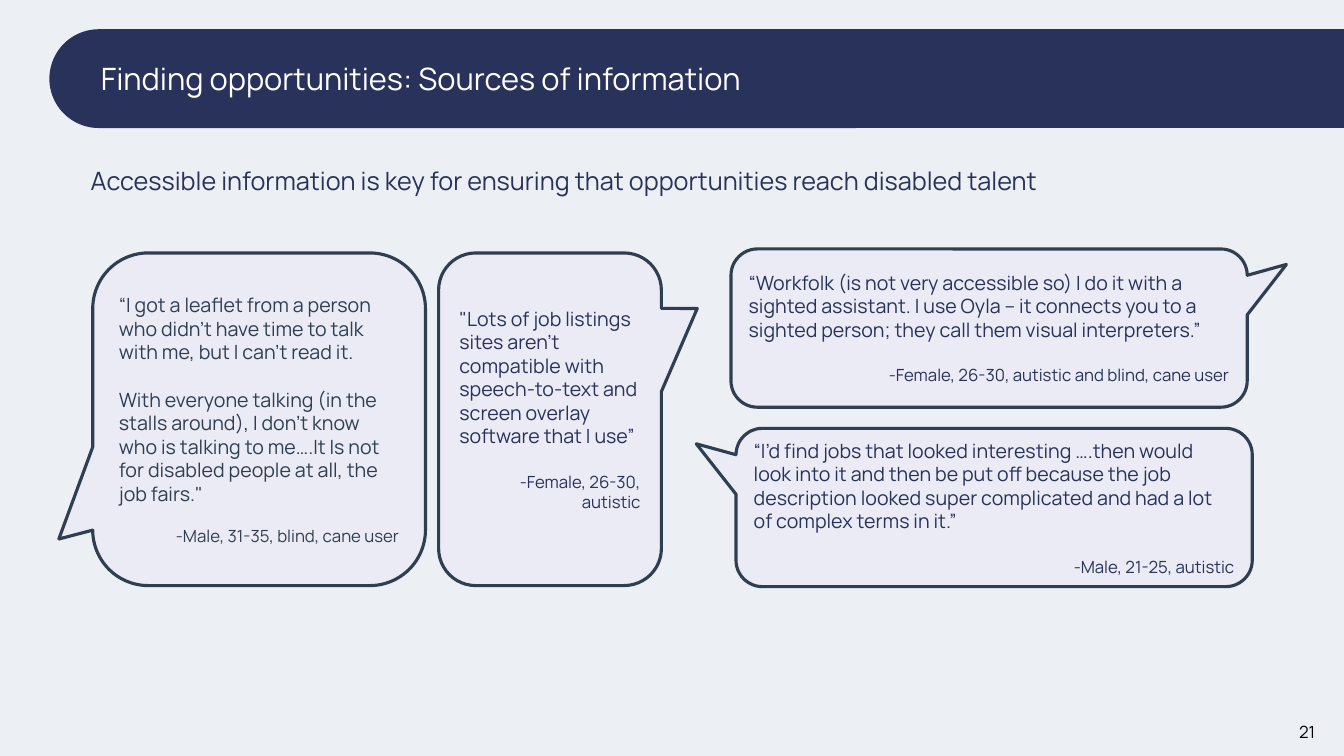
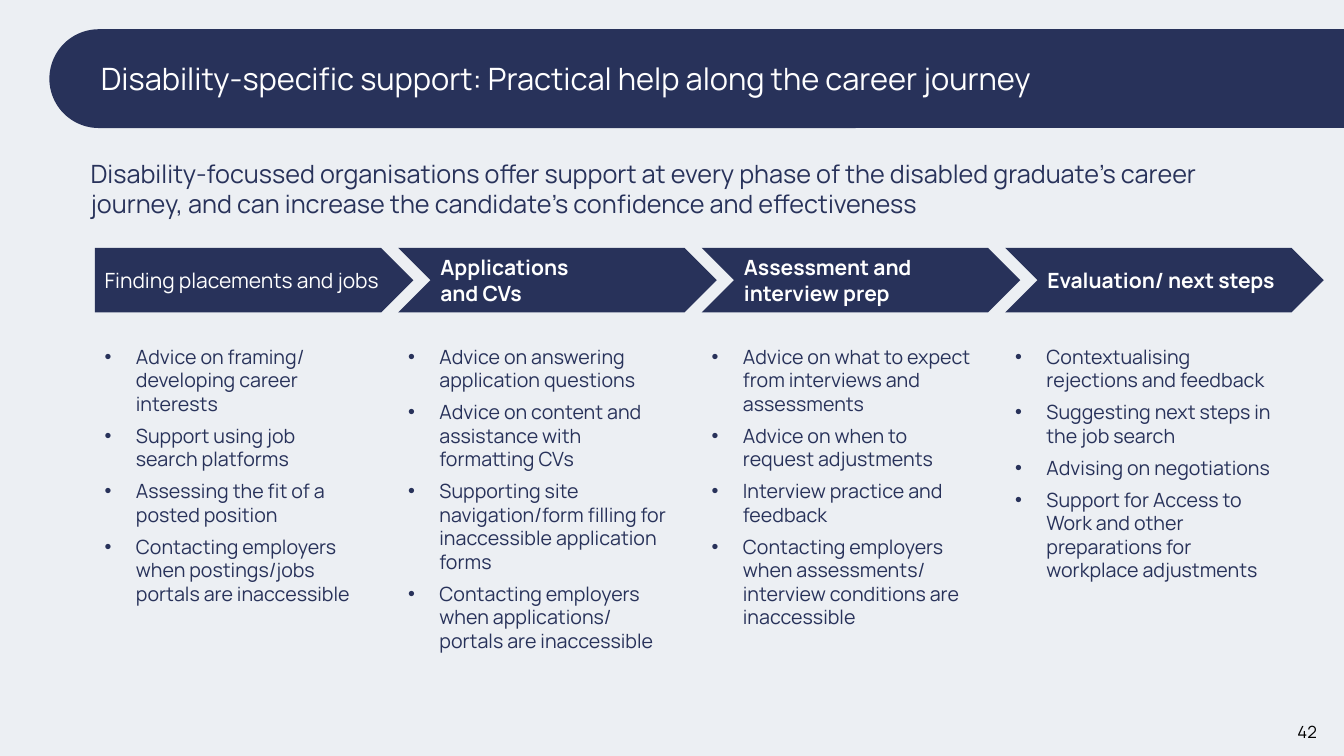
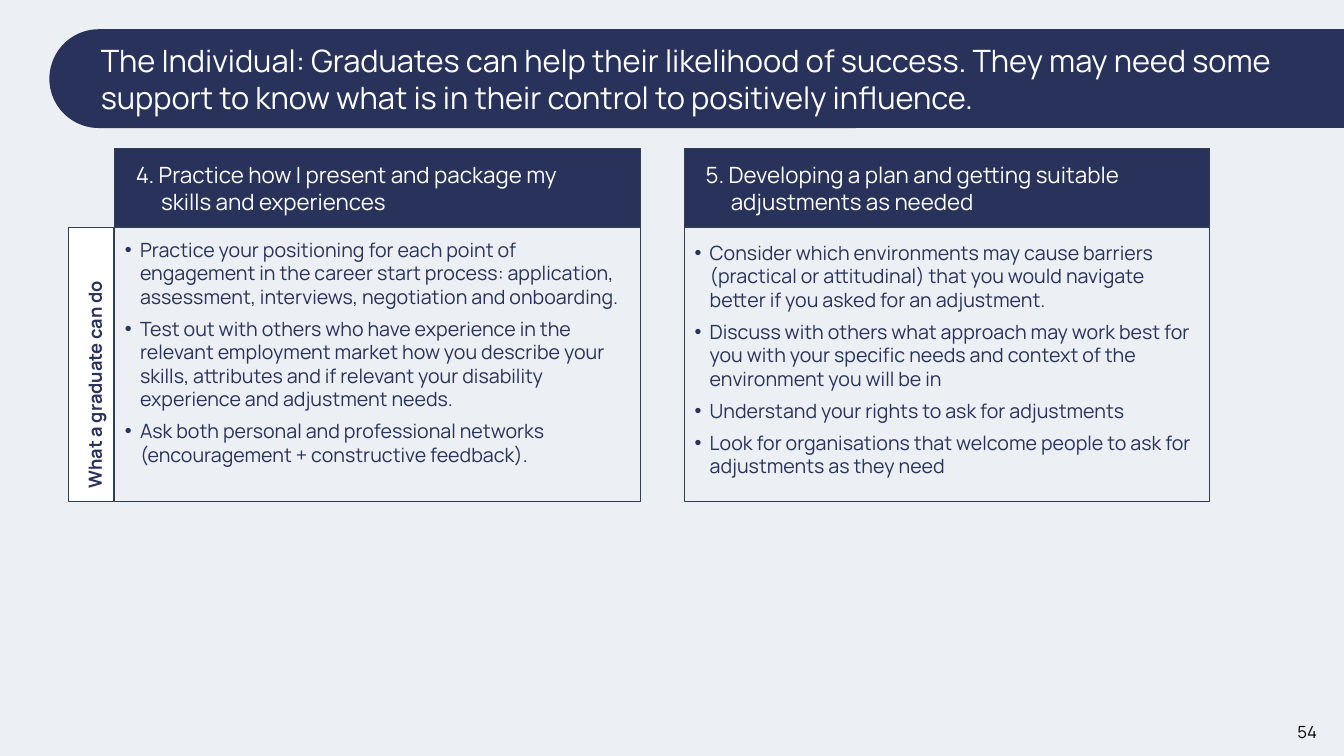
from dataclasses import dataclass

import pptx
import pptx.dml.color
import pptx.enum.shapes
import pptx.enum.text
import pptx.util
from lxml import etree
from pptx.oxml.ns import qn

Inches = pptx.util.Inches
Pt = pptx.util.Pt
Shape = pptx.enum.shapes.MSO_SHAPE
Align = pptx.enum.text.PP_ALIGN
Anchor = pptx.enum.text.MSO_ANCHOR
AutoSize = pptx.enum.text.MSO_AUTO_SIZE


def rgb(value):
    return pptx.dml.color.RGBColor.from_string(value)


@dataclass(frozen=True)
class Theme:
    font: str = "Manrope"
    background: str = "ECEFF3"
    navy: str = "28325A"
    slate: str = "303E51"
    bubble: str = "EAEBF4"
    white: str = "FFFFFF"
    black: str = "000000"
    title: float = 22
    lead: float = 18
    heading: float = 16
    step: float = 15
    body: float = 14
    label: float = 13
    small: float = 12
    bullet_gap: float = 6


class Deck:
    def __init__(self, theme):
        self.theme = theme
        self.presentation = pptx.Presentation()
        self.presentation.slide_width = Inches(13.33)
        self.presentation.slide_height = Inches(7.5)
        fill = self.presentation.slide_master.background.fill
        fill.solid()
        fill.fore_color.rgb = rgb(theme.background)
        self.layout = self.presentation.slide_layouts.get_by_name("Title Only")
        self.slide = None

    def new_slide(self, title, number):
        self.slide = self.presentation.slides.add_slide(self.layout)
        if len(self.presentation.slides) == 1:
            self.add_band_to_layout()
        placeholder = self.slide.shapes.title
        placeholder.left, placeholder.top = Inches(0.9), Inches(0.53)
        placeholder.width, placeholder.height = Inches(12.43), Inches(0.5)
        self.fill_text(placeholder.text_frame, [title], self.theme.title,
                       self.theme.white, anchor=Anchor.MIDDLE)
        self.text(12.69, 7.1, 0.55, 0.32, [str(number)], self.theme.small,
                  self.theme.black, align=Align.CENTER, anchor=Anchor.MIDDLE)

    def add_band_to_layout(self):
        band = self.shape(Shape.ROUNDED_RECTANGLE, 0.49, 0.29, 13.47, 0.98,
                          fill=self.theme.navy, adjustments=[0.5])
        self.layout.shapes.element.insert(2, band.element)

    def fill_text(self, frame, texts, size, color, bold=False, align=Align.LEFT,
                  anchor=Anchor.TOP, hanging=0, bullet=False, gap=0):
        frame.word_wrap = True
        frame.auto_size = AutoSize.NONE
        frame.vertical_anchor = anchor
        for index, text in enumerate(texts):
            paragraph = frame.paragraphs[0] if index == 0 else frame.add_paragraph()
            paragraph.text = text
            paragraph.alignment = align
            if hanging:
                self.hang(paragraph, hanging, bullet)
            paragraph.space_before = Pt(gap if index else 0)
            self.set_font(paragraph, size, color, bold)

    def set_font(self, paragraph, size, color, bold=False):
        font = paragraph.font
        font.name, font.size, font.bold = self.theme.font, Pt(size), bold
        font.color.rgb = rgb(color)

    def hang(self, paragraph, indent, bullet):
        properties = paragraph._p.get_or_add_pPr()
        properties.set("marL", str(Inches(indent)))
        properties.set("indent", str(-Inches(indent)))
        if bullet:
            etree.SubElement(properties, qn("a:buFont")).set("typeface", "Arial")
            etree.SubElement(properties, qn("a:buChar")).set("char", "•")

    def text(self, left, top, width, height, texts, size, color, **style):
        box = self.slide.shapes.add_textbox(
            Inches(left), Inches(top), Inches(width), Inches(height))
        self.fill_text(box.text_frame, texts, size, color, **style)
        return box

    def lead(self, top, height, text):
        self.text(0.8, top, 11.89, height, [text], self.theme.lead, self.theme.navy)

    def bullets(self, left, top, width, height, texts, hanging):
        self.text(left, top, width, height, texts, self.theme.body, self.theme.navy,
                  hanging=hanging, bullet=True, gap=self.theme.bullet_gap)

    def shape(self, kind, left, top, width, height, fill=None, line=None,
              line_width=0.75, adjustments=()):
        shape = self.slide.shapes.add_shape(
            kind, Inches(left), Inches(top), Inches(width), Inches(height))
        shape.shadow.inherit = False
        for index, value in enumerate(adjustments):
            shape.adjustments[index] = value
        if fill:
            shape.fill.solid()
            shape.fill.fore_color.rgb = rgb(fill)
        else:
            shape.fill.background()
        if line:
            shape.line.color.rgb = rgb(line)
            shape.line.width = Pt(line_width)
        else:
            shape.line.fill.background()
        return shape

    def callout(self, box, tail, quotes, speaker, color, speaker_gap=17, bottom=0.05):
        shape = self.shape(Shape.ROUNDED_RECTANGULAR_CALLOUT, *box,
                           fill=self.theme.bubble, line=self.theme.slate,
                           line_width=2.25, adjustments=[*tail, 0.167])
        frame = shape.text_frame
        frame.margin_bottom = Inches(bottom)
        self.fill_text(frame, quotes, self.theme.body, color, anchor=Anchor.MIDDLE, gap=17)
        paragraph = frame.add_paragraph()
        paragraph.text = speaker
        paragraph.alignment = Align.RIGHT
        paragraph.space_before = Pt(speaker_gap)
        self.set_font(paragraph, self.theme.small, color)

    def step(self, kind, left, lines, bold):
        shape = self.shape(kind, left, 2.46, 3.16, 0.64, fill=self.theme.navy)
        self.fill_text(shape.text_frame, lines, self.theme.step, self.theme.white,
                       bold=bold, anchor=Anchor.MIDDLE)

    def panel(self, left, heading, bullet_top, bullet_height, texts):
        theme = self.theme
        self.shape(Shape.RECTANGLE, left, 1.47, 5.21, 0.79, theme.navy, theme.slate)
        self.shape(Shape.RECTANGLE, left, 2.25, 5.21, 2.73, line=theme.slate)
        self.text(left + 0.11, 1.55, 4.65, 0.91, [heading], theme.heading,
                  theme.white, hanging=0.25)
        self.bullets(left, bullet_top, 5.21, bullet_height, texts, 0.15)


def build_quotes(deck):
    theme = deck.theme
    deck.new_slide("Finding opportunities: Sources of information", 21)
    deck.lead(1.59, 0.4, "Accessible information is key for ensuring that "
              "opportunities reach disabled talent")
    # Speech bubbles
    deck.callout(
        (4.35, 2.51, 2.21, 3.3), (0.661, -0.333),
        ["\"Lots of job listings sites aren’t compatible with speech-to-text and "
         "screen overlay software that I use”"],
        "-Female, 26-30, autistic", theme.navy, bottom=0.25)
    deck.callout(
        (0.92, 2.51, 3.3, 3.3), (-0.602, 0.36),
        ["“I got a leaflet from a person who didn’t have time to talk with me, "
         "but I can't read it.",
         "With everyone talking (in the stalls around), I don't know who is talking "
         "to me….It Is not for disabled people at all, the job fairs.\""],
        "-Male, 31-35, blind, cane user", theme.slate, speaker_gap=14.5)
    deck.callout(
        (7.25, 2.47, 5.12, 1.57), (0.576, -0.402),
        ["“Workfolk (is not very accessible so) I do it with a sighted assistant. "
         "I use Oyla – it connects you to a sighted person; they call them visual "
         "interpreters.”"],
        "-Female, 26-30, autistic and blind, cane user", theme.navy)
    deck.callout(
        (7.3, 4.25, 5.12, 1.57), (-0.577, -0.402),
        ["“I’d find jobs that looked interesting ….then would look into it and then "
         "be put off because the job description looked super complicated and had "
         "a lot of complex terms in it.”"],
        "-Male, 21-25, autistic", theme.navy)


def build_journey(deck):
    deck.new_slide("Disability-specific support: Practical help along the career journey", 42)
    deck.lead(1.52, 0.71, "Disability-focussed organisations offer support at every "
              "phase of the disabled graduate’s career journey, and can increase the "
              "candidate’s confidence and effectiveness")
    # Heading, bullet box width and height, bullets
    steps = [
        (["Finding placements and jobs"], 2.63, 3.21,
         ["Advice on framing/ developing career interests",
          "Support using job search platforms",
          "Assessing the fit of a posted position",
          "Contacting employers when postings/jobs portals are inaccessible"]),
        (["Applications", "and CVs"], 2.88, 3.45,
         ["Advice on answering application questions",
          "Advice on content and assistance with formatting CVs",
          "Supporting site navigation/form filling for inaccessible application forms",
          "Contacting employers when applications/ portals are inaccessible"]),
        (["Assessment and interview prep"], 2.88, 3.21,
         ["Advice on what to expect from interviews and assessments",
          "Advice on when to request adjustments",
          "Interview practice and feedback",
          "Contacting employers when assessments/ interview conditions are inaccessible"]),
        (["Evaluation/ next steps"], 2.88, 2.98,
         ["Contextualising rejections and feedback",
          "Suggesting next steps in the job search",
          "Advising on negotiations",
          "Support for Access to Work and other preparations for workplace adjustments"]),
    ]
    for index, (heading, width, height, texts) in enumerate(steps):
        left = 0.94 + 3.01 * index
        kind = Shape.CHEVRON if index else Shape.PENTAGON
        deck.step(kind, left, heading, bold=index > 0)
        deck.bullets(left, 3.37, width, height, texts, 0.31)


def build_actions(deck):
    theme = deck.theme
    deck.new_slide("The Individual: Graduates can help their likelihood of success. "
                   "They may need some support to know what is in their control to "
                   "positively influence.", 54)
    # Side label
    deck.shape(Shape.RECTANGLE, 0.68, 2.26, 0.45, 2.72, theme.white, theme.slate)
    label = deck.text(-0.29, 3.55, 2.46, 0.32, ["What a graduate can do"],
                      theme.label, theme.navy, bold=True)
    label.rotation = 270
    # Action panels
    deck.panel(
        1.14, "4. Practice how I present and package my skills and experiences", 2.31, 2.63,
        ["Practice your positioning for each point of engagement in the career start "
         "process: application, assessment, interviews, negotiation and onboarding.",
         "Test out with others who have experience in the relevant employment market "
         "how you describe your skills, attributes and if relevant your disability "
         "experience and adjustment needs.",
         "Ask both personal and professional networks (encouragement + constructive "
         "feedback)."])
    deck.panel(
        6.79, "5. Developing a plan and getting suitable adjustments as needed", 2.34, 2.74,
        ["Consider which environments may cause barriers (practical or attitudinal) "
         "that you would navigate better if you asked for an adjustment.",
         "Discuss with others what approach may work best for you with your specific "
         "needs and context of the environment you will be in",
         "Understand your rights to ask for adjustments",
         "Look for organisations that welcome people to ask for adjustments as they need"])


def main():
    deck = Deck(Theme())
    build_quotes(deck)
    build_journey(deck)
    build_actions(deck)
    deck.presentation.save("out.pptx")


if __name__ == "__main__":
    main()
